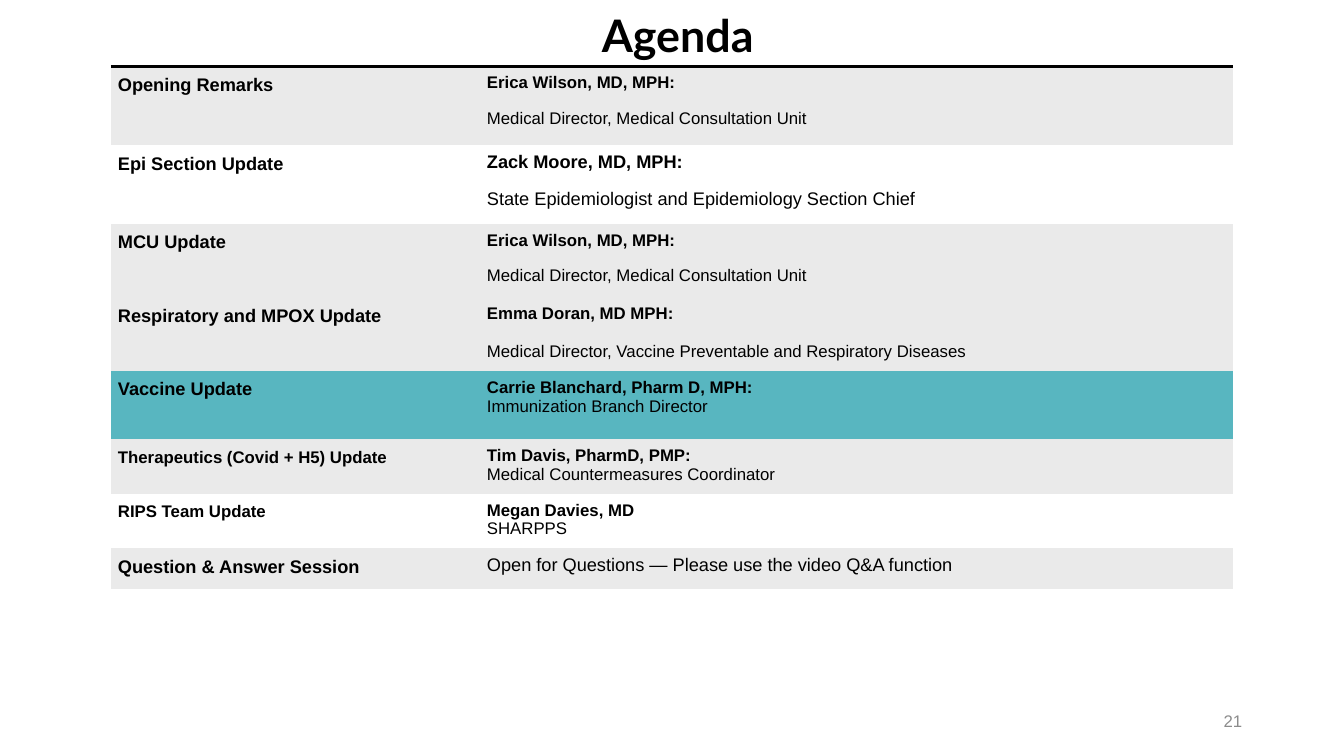
from lxml.etree import SubElement
from pptx import Presentation
from pptx.dml.color import RGBColor
from pptx.enum.text import MSO_ANCHOR, PP_ALIGN
from pptx.oxml.ns import qn
from pptx.util import Inches, Pt

BLACK = RGBColor(0x00, 0x00, 0x00)
WHITE = RGBColor(0xFF, 0xFF, 0xFF)
GREY = RGBColor(0xEA, 0xEA, 0xEA)
TEAL = RGBColor(0x58, 0xB6, 0xC0)
NUMBER_GREY = RGBColor(0x8C, 0x8C, 0x8C)
NO_STYLE = "{2D5ABB26-0587-4C30-8999-92F81FD0307C}"


def add_run(paragraph, text, **font_values):
    run = paragraph.add_run()
    run.text = text
    color = font_values.pop("color", BLACK)
    for name, value in font_values.items():
        setattr(run.font, name, value)
    run.font.color.rgb = color


def add_label(slide, left, top, width, height, text, alignment, wrap, **font_values):
    frame = slide.shapes.add_textbox(
        Inches(left), Inches(top), Inches(width), Inches(height)).text_frame
    frame.word_wrap = wrap
    frame.vertical_anchor = MSO_ANCHOR.MIDDLE
    frame.paragraphs[0].alignment = alignment
    add_run(frame.paragraphs[0], text, **font_values)


presentation = Presentation()
presentation.slide_width = Inches(13.33)
presentation.slide_height = Inches(7.5)
slide = presentation.slides.add_slide(presentation.slide_layouts[6])

# Page number
add_label(slide, 9.42, 6.95, 3, 0.4, "21", PP_ALIGN.RIGHT, True,
          name="Arial", size=Pt(12), color=NUMBER_GREY)

# Agenda rows: height, fill, topic, topic size, speaker, role, detail size, gap between
agenda = [
    (0.78, GREY, "Opening Remarks", 13, "Erica Wilson, MD, MPH:",
     "Medical Director, Medical Consultation Unit", 12, 12),
    (0.78, WHITE, "Epi Section Update", 13, "Zack Moore, MD, MPH:",
     "State Epidemiologist and Epidemiology Section Chief", 13, 12),
    (0.73, GREY, "MCU Update", 13, "Erica Wilson, MD, MPH:",
     "Medical Director, Medical Consultation Unit", 12, 12),
    (0.73, GREY, "Respiratory and MPOX Update", 13, "Emma Doran, MD MPH:",
     "Medical Director, Vaccine Preventable and Respiratory Diseases", 12, 13.5),
    (0.68, TEAL, "Vaccine Update", 13, "Carrie Blanchard, Pharm D, MPH:",
     "Immunization Branch Director", 12, 0),
    (0.53, GREY, "Therapeutics (Covid + H5) Update", 12, "Tim Davis, PharmD, PMP:",
     "Medical Countermeasures Coordinator", 12, 0),
    (0.53, WHITE, "RIPS Team Update", 12, "Megan Davies, MD", "SHARPPS", 12, 0),
    (0.4, GREY, "Question & Answer Session", 13, None,
     "Open for Questions — Please use the video Q&A function", 13, 0),
]

# Table
total_height = sum(row[0] for row in agenda)
table = slide.shapes.add_table(
    len(agenda), 2, Inches(1.1), Inches(0.66), Inches(11.13), Inches(total_height)).table
table.first_row = False
table.horz_banding = False
table._tbl.tblPr.find(qn("a:tableStyleId")).text = NO_STYLE
for column, width in zip(table.columns, (3.66, 7.47)):
    column.width = Inches(width)

for index, (height, fill, topic, topic_size, speaker, role, size, gap) in enumerate(agenda):
    table.rows[index].height = Inches(height)
    topic_cell, detail_cell = table.cell(index, 0), table.cell(index, 1)
    for cell in (topic_cell, detail_cell):
        for side in ("left", "right", "top", "bottom"):
            setattr(cell, f"margin_{side}", Inches(0.07))
        # Rule above the first row
        if index == 0:
            line = SubElement(cell._tc.get_or_add_tcPr(), qn("a:lnT"), w=str(Pt(2.25)))
            line_fill = SubElement(line, qn("a:solidFill"))
            SubElement(line_fill, qn("a:srgbClr"), val=str(BLACK))
        cell.fill.solid()
        cell.fill.fore_color.rgb = fill

    # Topic
    paragraph = topic_cell.text_frame.paragraphs[0]
    paragraph.line_spacing = 1.07
    add_run(paragraph, topic, name="Arial", size=Pt(topic_size), bold=True)

    # Speaker and role
    paragraph = detail_cell.text_frame.paragraphs[0]
    if speaker:
        add_run(paragraph, speaker, name="Arial", size=Pt(size), bold=True)
        paragraph = detail_cell.text_frame.add_paragraph()
        paragraph.space_before = Pt(gap)
    add_run(paragraph, role, name="Arial", size=Pt(size), bold=False)

# Title
add_label(slide, 5.87, 0.02, 1.72, 0.64, "Agenda", PP_ALIGN.LEFT, False,
          name="Lato", size=Pt(32), bold=True)

presentation.save("out.pptx")
